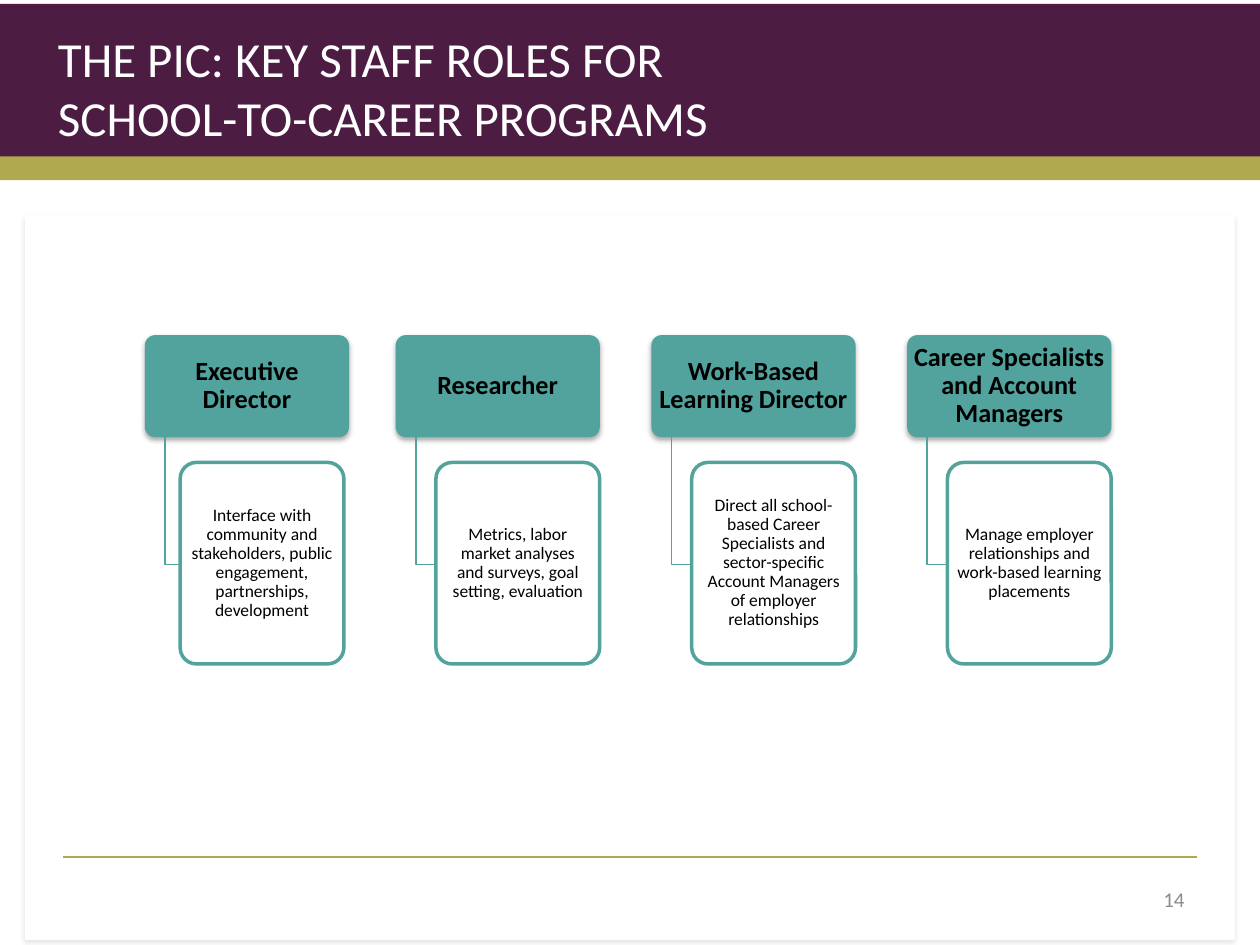
"""Build the slide on key staff roles for school-to-career programs."""
from lxml import etree
from pptx import Presentation
from pptx.dml.color import RGBColor
from pptx.enum.shapes import MSO_CONNECTOR, MSO_SHAPE
from pptx.enum.text import MSO_ANCHOR, MSO_AUTO_SIZE, PP_ALIGN
from pptx.oxml.ns import qn
from pptx.util import Inches, Pt

RECT, ROUND = MSO_SHAPE.RECTANGLE, MSO_SHAPE.ROUNDED_RECTANGLE
LEFT, MID, RIGHT = PP_ALIGN.LEFT, PP_ALIGN.CENTER, PP_ALIGN.RIGHT
TOP, CENTER = MSO_ANCHOR.TOP, MSO_ANCHOR.MIDDLE
COLORS = {"plum": "4D1C43", "olive": "B0A94F", "teal": "52A29D",
          "white": "FFFFFF", "black": "000000", "gray": "8C8C8C"}
RGB = {name: RGBColor.from_string(code) for name, code in COLORS.items()}


def add_box(kind, place, fill, line=None, shade=0):
    box = slide.shapes.add_shape(kind, *map(Inches, place))
    box.shadow.inherit = False
    box.fill.solid()
    box.fill.fore_color.rgb = RGB[fill]
    if line:
        box.line.color.rgb = RGB[line]
        box.line.width = Pt(2)
    else:
        box.line.fill.background()
    if shade:
        effects = box._element.spPr.find(qn("a:effectLst"))
        outer = etree.SubElement(effects, qn("a:outerShdw"), blurRad=str(Pt(3.1)),
                                 dist=str(Pt(1.8)), dir="5400000", rotWithShape="0")
        tint = etree.SubElement(outer, qn("a:srgbClr"), val=COLORS["black"])
        etree.SubElement(tint, qn("a:alpha"), val=str(shade * 1000))
    return box


def write(shape, text, size, color, align, anchor, pad=None, bold=False, space=1.0):
    frame = shape.text_frame
    frame.text = text
    form = {"word_wrap": True, "auto_size": MSO_AUTO_SIZE.NONE, "vertical_anchor": anchor}
    if pad:
        side, edge = map(Inches, pad)
        form.update(margin_left=side, margin_right=side, margin_top=edge, margin_bottom=edge)
    for key, value in form.items():
        setattr(frame, key, value)
    para = frame.paragraphs[0]
    para.alignment = align
    para.line_spacing = space
    for key, value in {"name": "Calibri", "size": Pt(size), "bold": bold}.items():
        setattr(para.font, key, value)
    para.font.color.rgb = RGB[color]
    for run in para.runs:
        run.font.color.rgb = RGB[color]


deck = Presentation()
deck.slide_width, deck.slide_height = Inches(10), Inches(7.5)
slide = deck.slides.add_slide(deck.slide_layouts[5])

add_box(RECT, (0, 0.03, 10, 1.25), "plum")
add_box(RECT, (0, 1.24, 10, 0.19), "olive")
add_box(RECT, (0.2, 1.71, 9.6, 5.75), "white", shade=10)

rule = slide.shapes.add_connector(
    MSO_CONNECTOR.STRAIGHT, Inches(0.5), Inches(6.8), Inches(9.5), Inches(6.8))
rule.line.color.rgb = RGB["olive"]
rule.line.width = Pt(1)
etree.SubElement(rule._element.spPr, qn("a:effectLst"))

number = slide.shapes.add_textbox(*map(Inches, (7.17, 6.94, 2.33, 0.4)))
write(number, "14", 12, "gray", RIGHT, CENTER)

title = slide.shapes.title
title.left, title.top, title.width, title.height = map(Inches, (0.36, 0.18, 7.11, 1.05))
write(title, "THE PIC: KEY STAFF ROLES FOR\vSCHOOL-TO-CAREER PROGRAMS",
      28, "white", LEFT, TOP)
slide.shapes._spTree.append(title._element)

ROLES = [
    (1.15, 1.43, "Executive Director",
     "Interface with community and stakeholders, public engagement, "
     "partnerships, development"),
    (3.14, 3.46, "Researcher",
     "Metrics, labor market analyses\vand surveys, goal setting, evaluation"),
    (5.17, 5.49, "Work-Based Learning Director",
     "Direct all school-based Career Specialists and sector-specific "
     "Account Managers of employer relationships"),
    (7.2, 7.52, "Career Specialists and Account Managers",
     "Manage employer relationships and work-based learning placements"),
]
for left, inner, role, duty in ROLES:
    head = add_box(ROUND, (left, 2.66, 1.62, 0.81), "teal", shade=35)
    head.adjustments[0] = 0.1
    write(head, role, 15, "black", MID, CENTER, (0.03, 0.02), True, 0.9)

    stem = left + 0.16
    pen = slide.shapes.build_freeform(Inches(stem), Inches(3.47))
    pen.add_line_segments([(Inches(stem), Inches(4.48)), (Inches(inner), Inches(4.48))],
                          close=False)
    elbow = pen.convert_to_shape()
    elbow.shadow.inherit = False
    elbow.fill.background()
    elbow.line.color.rgb = RGB["teal"]
    elbow.line.width = Pt(1)

    card = add_box(ROUND, (inner, 3.67, 1.3, 1.6), "white", line="teal")
    card.adjustments[0] = 0.1
    tint = card._element.spPr.find(qn("a:solidFill"))[0]
    etree.SubElement(tint, qn("a:alpha"), val="90000")
    write(card, duty, 10, "black", MID, CENTER, (0.02, 0.01), space=0.9)

deck.save("out.pptx")
